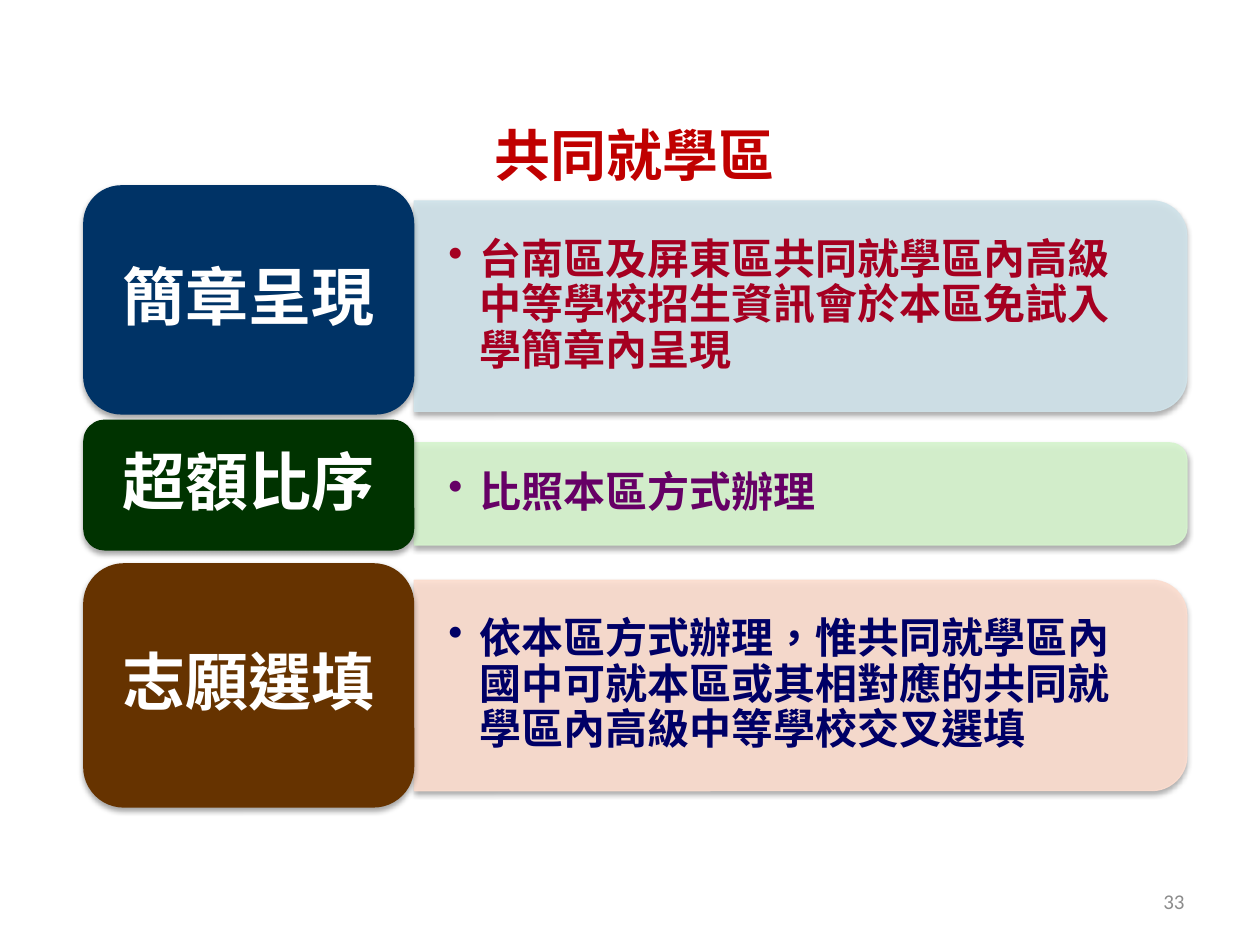
from lxml import etree
from pptx import Presentation
from pptx.dml.color import RGBColor
from pptx.enum.shapes import MSO_SHAPE
from pptx.enum.text import MSO_ANCHOR, PP_ALIGN
from pptx.oxml.ns import qn
from pptx.util import Inches, Pt

ROUNDED = MSO_SHAPE.ROUNDED_RECTANGLE
TAB = MSO_SHAPE.ROUND_2_SAME_RECTANGLE
MIDDLE = MSO_ANCHOR.MIDDLE
LEFT, CENTER, RIGHT = PP_ALIGN.LEFT, PP_ALIGN.CENTER, PP_ALIGN.RIGHT

CJK_FONT = "Noto Sans CJK SC"
COLUMNS, ROWS = 100, 75  # square grid cells over a 10 x 7.5 inch slide
CELL = Inches(10) / COLUMNS
CORNER_INSET = 0.049  # gap that keeps text clear of a rounded corner
LABEL_SHARE = 0.3  # label's part of a band's width

BANDS = [
    {"title": "簡章呈現", "label_fill": "003366", "label_rows": (14.7, 18.2),
     "detail": "台南區及屏東區共同就學區內高級中等學校招生資訊會於本區免試入學簡章內呈現",
     "detail_fill": "D0E3EA", "detail_color": "A50021", "detail_rows": (15.95, 16.7)},
    {"title": "超額比序", "label_fill": "003300", "label_rows": (33.3, 10.4),
     "detail": "比照本區方式辦理",
     "detail_fill": "D6F4CE", "detail_color": "660066", "detail_rows": (35.15, 8.1)},
    {"title": "志願選填", "label_fill": "663300", "label_rows": (44.7, 19.4),
     "detail": "依本區方式辦理，惟共同就學區內國中可就本區或其相對應的共同就學區內高級中等學校交叉選填",
     "detail_fill": "FCDDCF", "detail_color": "000066", "detail_rows": (46.05, 16.7)},
]


def color(hex_code):
    return RGBColor.from_string(hex_code)


def cells(*lengths):
    return [round(length * CELL) for length in lengths]


def apply_format(target, values):
    for name, value in values.items():
        setattr(target, name, value)


def set_alpha(color_parent, percent):
    """Make the solid colour found below color_parent partly transparent."""
    srgb = color_parent.find(".//" + qn("a:srgbClr"))
    etree.SubElement(srgb, qn("a:alpha"), val=str(percent * 1000))


def add_soft_shadow(shape):
    shape.shadow.inherit = False
    effects = shape._element.spPr.find(qn("a:effectLst"))
    shadow = etree.SubElement(
        effects, qn("a:outerShdw"), blurRad=str(Pt(3.1)), dist=str(Pt(1.8)),
        dir="5400000", algn="ctr", rotWithShape="0")
    etree.SubElement(shadow, qn("a:srgbClr"), val="000000")
    set_alpha(shadow, 35)


def add_text(slide, box, text, hex_code, font, paragraph=None, margins=(0.1, 0.05), bullet=False):
    text_box = slide.shapes.add_textbox(*cells(*box))
    side, edge = map(Inches, margins)
    apply_format(text_box.text_frame, {
        "word_wrap": True, "vertical_anchor": MIDDLE, "margin_left": side,
        "margin_right": side, "margin_top": edge, "margin_bottom": edge})
    line = text_box.text_frame.paragraphs[0]
    if bullet:
        properties = line._p.get_or_add_pPr()
        properties.set("marL", str(Inches(0.25)))
        properties.set("indent", str(-Inches(0.25)))
        etree.SubElement(properties, qn("a:buChar"), char="•")
    apply_format(line, paragraph or {})
    run = line.add_run()
    run.text = text
    apply_format(run.font, font)
    run.font.color.rgb = color(hex_code)
    if font["name"] == CJK_FONT:
        run_properties = run._r.get_or_add_rPr()
        run_properties.set("lang", "zh-TW")
        etree.SubElement(run_properties, qn("a:ea"), typeface=CJK_FONT)


def add_label(slide, box, text, fill):
    left, top, width, height = box
    plate = slide.shapes.add_shape(ROUNDED, *cells(*box))
    plate.fill.solid()
    plate.fill.fore_color.rgb = color(fill)
    plate.line.fill.background()
    add_soft_shadow(plate)
    inset = CORNER_INSET * height
    add_text(slide, (left + inset, top + inset, width - 2 * inset, height - 2 * inset),
             text, "FFFFFF", {"name": CJK_FONT, "size": Pt(36), "bold": True},
             {"alignment": CENTER, "line_spacing": 0.9, "space_after": Pt(12.6)},
             (0.15, 0.07))


def add_detail(slide, box, text, fill, text_color):
    """Panel rounded on its right side: a tab shape turned a quarter."""
    left, top, width, height = box
    shift = (width - height) / 2
    panel = slide.shapes.add_shape(TAB, *cells(left + shift, top - shift, height, width))
    panel.rotation = 90
    panel.line.width = Pt(0.75)
    for paint in (panel.fill, panel.line.fill):
        paint.solid()
        paint.fore_color.rgb = color(fill)
    set_alpha(panel._element.spPr.find(qn("a:solidFill")), 90)
    set_alpha(panel._element.spPr.find(qn("a:ln")), 90)
    add_soft_shadow(panel)
    inset = CORNER_INSET * height
    add_text(slide, (left, top + inset, width - inset, height - 2 * inset),
             text, text_color, {"name": CJK_FONT, "size": Pt(24), "bold": True},
             {"alignment": LEFT, "level": 1, "line_spacing": 0.9, "space_after": Pt(3.6)},
             (0.27, 0.14), bullet=True)


def add_bands(slide, left, width):
    label_width = LABEL_SHARE * width
    for band in BANDS:
        label_top, label_height = band["label_rows"]
        detail_top, detail_height = band["detail_rows"]
        add_detail(slide, (left + label_width, detail_top, width - label_width, detail_height),
                   band["detail"], band["detail_fill"], band["detail_color"])
        add_label(slide, (left, label_top, label_width, label_height),
                  band["title"], band["label_fill"])


def main():
    deck = Presentation()
    deck.slide_width, deck.slide_height = cells(COLUMNS, ROWS)
    slide = deck.slides.add_slide(deck.slide_layouts[6])
    add_text(slide, (5.4, 7.6, 90, 9.3), "共同就學區", "C00000",
             {"name": CJK_FONT, "size": Pt(32), "bold": True}, {"alignment": CENTER})
    add_bands(slide, left=6.6, width=87.6)
    add_text(slide, (71.7, 69.5, 23.3, 4), "33", "8C8C8C",
             {"name": "Calibri", "size": Pt(12)}, {"alignment": RIGHT})
    deck.save("out.pptx")


if __name__ == "__main__":
    main()
